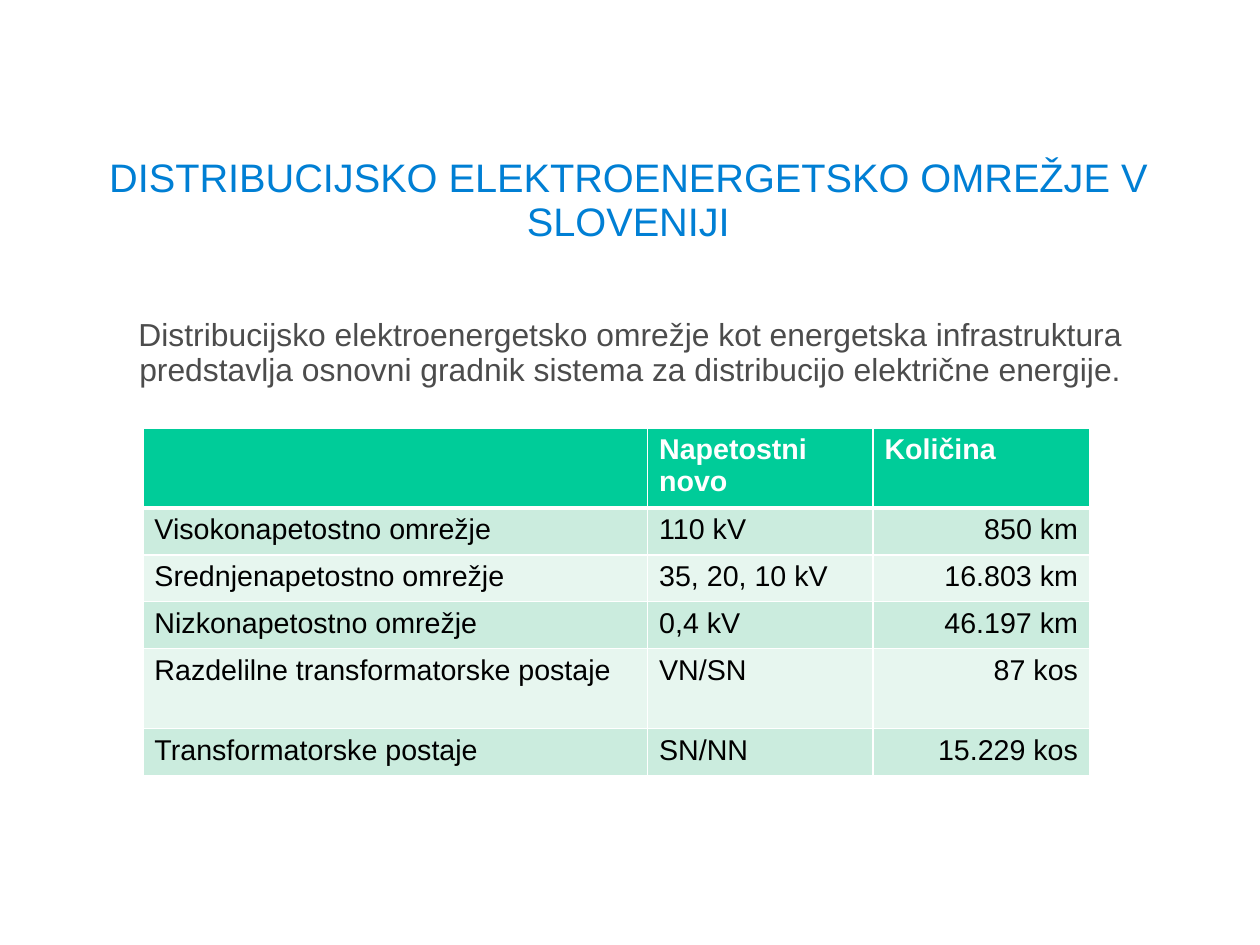
import dataclasses

import lxml.etree
import pptx
import pptx.dml.color
import pptx.enum.text
import pptx.oxml.ns
import pptx.slide
import pptx.table
import pptx.text.text
import pptx.util

Inches = pptx.util.Inches
Align = pptx.enum.text.PP_ALIGN

FONT = "Arial"
WHITE, BLACK = "FFFFFF", "000000"
TITLE_BLUE, BODY_GREY = "007FD4", "4C4C4C"
HEADER_GREEN = "00CC99"
BAND_COLORS = ("CBECDE", "E7F6EF")


@dataclasses.dataclass(frozen=True)
class TextBlock:
    text: str
    left: float
    top: float
    width: float
    height: float
    size: float
    color: str


TEXT_BLOCKS = (
    TextBlock("DISTRIBUCIJSKO ELEKTROENERGETSKO OMREŽJE V SLOVENIJI",
              0.53, 1.32, 9.92, 0.92, 25, TITLE_BLUE),
    TextBlock("Distribucijsko elektroenergetsko omrežje kot energetska infrastruktura "
              "predstavlja osnovni gradnik sistema za distribucijo električne energije.",
              0.55, 2.73, 9.92, 0.8, 20, BODY_GREY),
)

COLUMN_WIDTHS = (4.41, 1.97, 1.89)
ROW_HEIGHTS = (0.7, 0.41, 0.41, 0.41, 0.7, 0.41)
ROWS = (
    ("", "Napetostni novo", "Količina"),
    ("Visokonapetostno omrežje", "110 kV", "850 km"),
    ("Srednjenapetostno omrežje", "35, 20, 10 kV", "16.803 km"),
    ("Nizkonapetostno omrežje", "0,4 kV", "46.197 km"),
    ("Razdelilne transformatorske postaje", "VN/SN", "87 kos"),
    ("Transformatorske postaje", "SN/NN", "15.229 kos"),
)


def rgb(color: str) -> pptx.dml.color.RGBColor:
    return pptx.dml.color.RGBColor.from_string(color)


def write_text(frame: pptx.text.text.TextFrame, text: str, *, size: float, color: str,
               bold: bool = False, align: Align = Align.LEFT,
               line_spacing: float = 1.0) -> None:
    frame.word_wrap = True
    paragraph = frame.paragraphs[0]
    paragraph.alignment = align
    paragraph.line_spacing = line_spacing
    paragraph.font.size = pptx.util.Pt(size)
    if text:
        run = paragraph.add_run()
        run.text = text
        run.font.name = FONT
        run.font.size = pptx.util.Pt(size)
        run.font.bold = bold
        run.font.color.rgb = rgb(color)


def add_text_block(slide: pptx.slide.Slide, block: TextBlock) -> None:
    shape = slide.shapes.add_textbox(Inches(block.left), Inches(block.top),
                                     Inches(block.width), Inches(block.height))
    write_text(shape.text_frame, block.text, size=block.size, color=block.color,
               align=Align.CENTER, line_spacing=0.93)


def set_borders(cell: pptx.table._Cell, widths: dict[str, float]) -> None:
    """Draw white borders; the line elements must come before the cell fill."""
    qn = pptx.oxml.ns.qn
    properties = cell._tc.get_or_add_tcPr()
    for position, (side, width) in enumerate(widths.items()):
        line = lxml.etree.Element(qn(f"a:ln{side}"), w=str(pptx.util.Pt(width)))
        fill = lxml.etree.SubElement(line, qn("a:solidFill"))
        lxml.etree.SubElement(fill, qn("a:srgbClr"), val=WHITE)
        properties.insert(position, line)


def add_network_table(slide: pptx.slide.Slide) -> None:
    frame = slide.shapes.add_table(len(ROWS), len(COLUMN_WIDTHS), Inches(1.25), Inches(3.74),
                                   Inches(sum(COLUMN_WIDTHS)), Inches(sum(ROW_HEIGHTS)))
    table = frame.table
    table.horz_banding = False
    for column, width in zip(table.columns, COLUMN_WIDTHS):
        column.width = Inches(width)
    for row, height in zip(table.rows, ROW_HEIGHTS):
        row.height = Inches(height)

    for row_index, texts in enumerate(ROWS):
        is_header = row_index == 0
        fill_color = HEADER_GREEN if is_header else BAND_COLORS[(row_index - 1) % 2]
        for column_index, text in enumerate(texts):
            cell = table.cell(row_index, column_index)
            is_quantity = not is_header and column_index == len(texts) - 1
            write_text(cell.text_frame, text, size=18, color=WHITE if is_header else BLACK,
                       bold=is_header, align=Align.RIGHT if is_quantity else Align.LEFT)
            cell.fill.solid()
            cell.fill.fore_color.rgb = rgb(fill_color)
            set_borders(cell, {"L": 1, "R": 1, "T": 3 if row_index == 1 else 1,
                               "B": 3 if is_header else 1})


def main() -> None:
    presentation = pptx.Presentation()
    presentation.slide_width = Inches(11.01)
    presentation.slide_height = Inches(8.26)
    slide = presentation.slides.add_slide(presentation.slide_layouts[6])

    # Title and introduction
    for block in TEXT_BLOCKS:
        add_text_block(slide, block)

    # Network figures
    add_network_table(slide)

    presentation.save("out.pptx")


if __name__ == "__main__":
    main()
